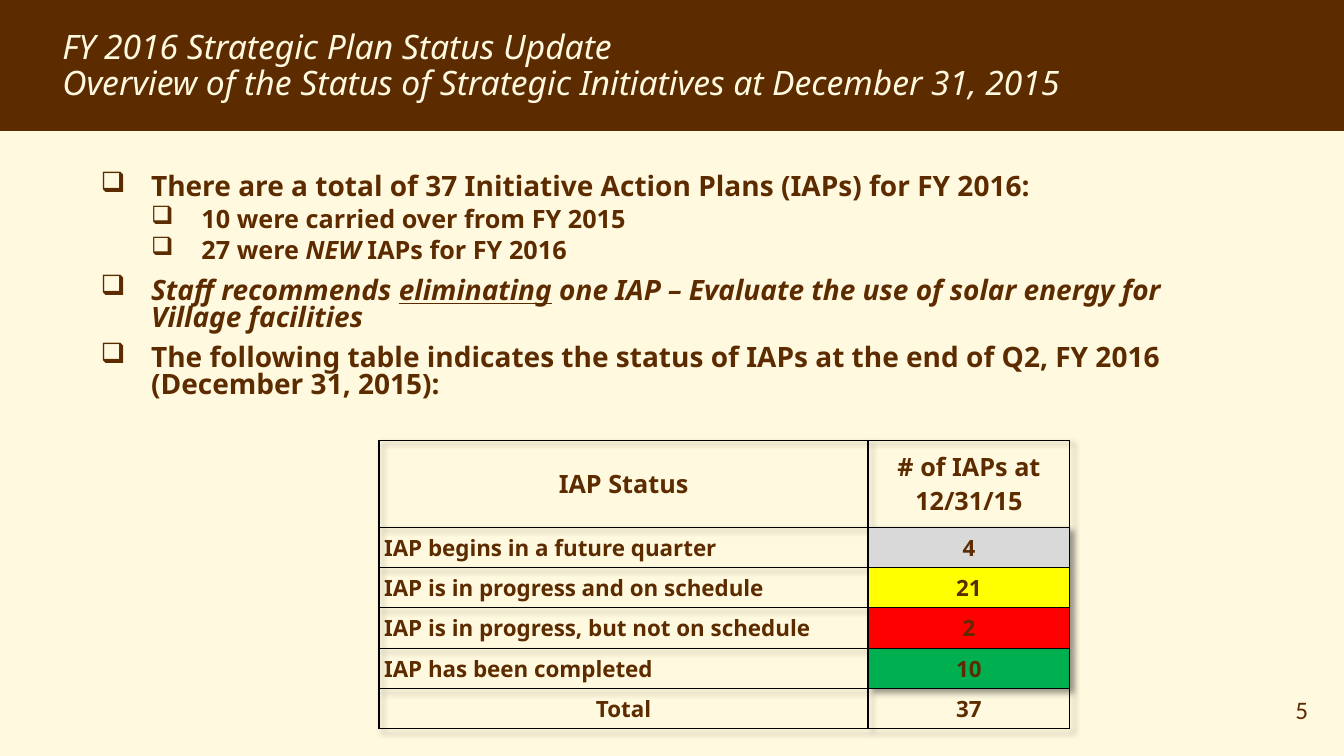
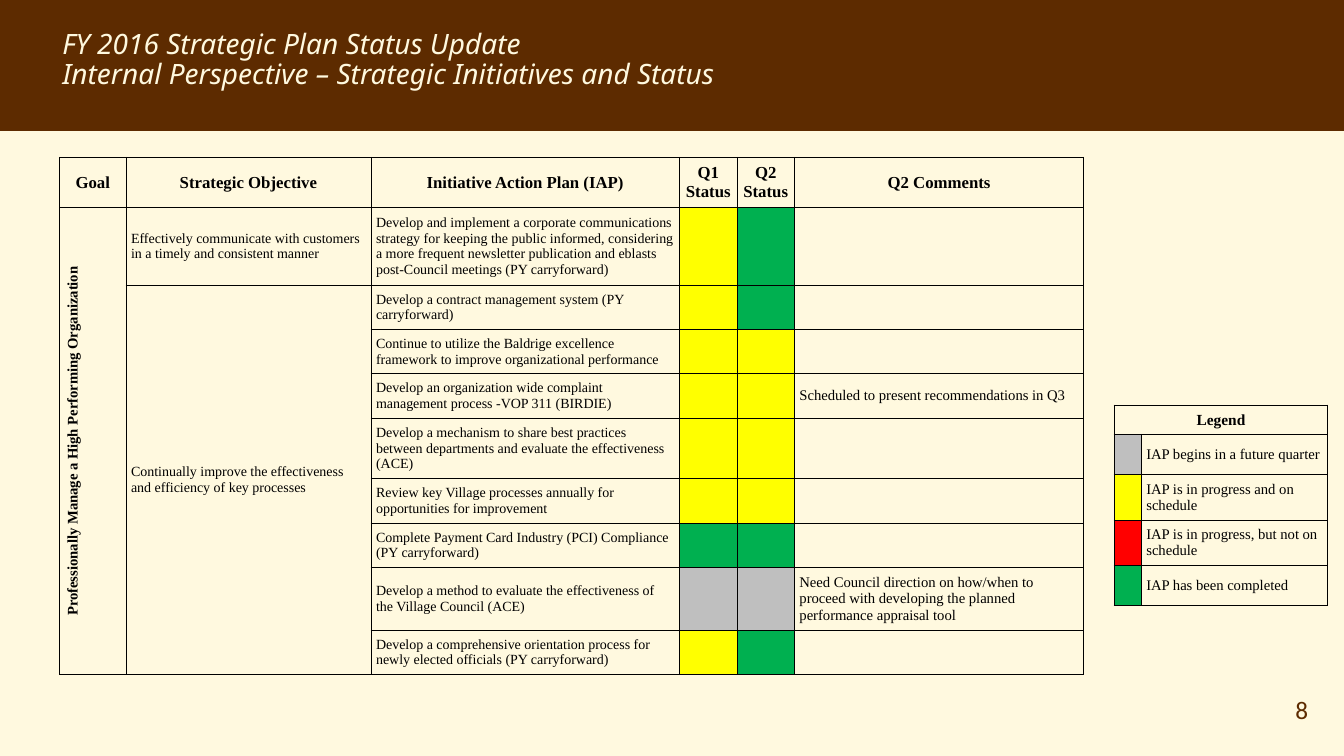
from lxml.etree import SubElement
from pptx import Presentation
from pptx.dml.color import RGBColor
from pptx.enum.shapes import MSO_SHAPE
from pptx.enum.text import MSO_ANCHOR, PP_ALIGN
from pptx.oxml.ns import qn
from pptx.util import Inches, Pt

COLORS = {
    "cream": "FFF9DF", "brown": "5D2B00", "black": "000000",
    "light": "D9D9D9", "future": "BFBFBF", "progress": "FFFF00",
    "late": "FF0000", "done": "00B050",
}
SANS = {"name": "Noto Sans", "bold": True}
SERIF = {"name": "Times New Roman"}
FONTS = {
    "title": {"name": "Noto Sans", "italic": True},
    "page": {"name": "Calibri", "size": Pt(18)},
    "point": {**SANS, "size": Pt(20)},
    "subpoint": {**SANS, "size": Pt(18)},
    "count head": {**SANS, "size": Pt(18)},
    "count": {**SANS, "size": Pt(16)},
    "status": {**SANS, "size": Pt(16)},
    "plan head": {**SERIF, "size": Pt(12), "bold": True},
    "goal": {**SERIF, "size": Pt(10.5), "bold": True},
    "plan": {**SERIF, "size": Pt(10)},
    "comment": {**SERIF, "size": Pt(10.5)},
    "legend head": {**SERIF, "size": Pt(11), "bold": True},
}
CENTERED = {"count head", "count", "plan head", "goal", "legend head"}
TIGHT = {f"margin_{side}": Inches(0.05) for side in ("left", "right", "top", "bottom")}


def rgb(name):
    return RGBColor.from_string(COLORS[name])


def apply(target, values):
    for attribute, value in values.items():
        setattr(target, attribute, value)


class StatusDeck:
    """Holds the report style and the slide being filled."""

    def __init__(self):
        self.deck = Presentation()
        apply(self.deck, {"slide_width": Inches(13.33), "slide_height": Inches(7.5)})
        self.slide = None

    def start(self, subtitle, size, page):
        self.slide = self.deck.slides.add_slide(self.deck.slide_layouts[6])
        background = self.slide.background.fill
        background.solid()
        background.fore_color.rgb = rgb("cream")
        band = self.slide.shapes.add_shape(
            MSO_SHAPE.RECTANGLE, 0, 0, self.deck.slide_width, Inches(1.3))
        band.shadow.inherit = False
        band.fill.solid()
        band.fill.fore_color.rgb = rgb("brown")
        band.line.fill.background()
        heading = self.frame(0.52, 0.25, 12.2, 0.9)
        for line in ("FY 2016 Strategic Plan Status Update", subtitle):
            paragraph = self.paragraph(heading)
            paragraph.line_spacing = 0.9
            self.run(paragraph, line, "title", "cream", {"size": Pt(size)})
        number = self.paragraph(self.frame(12.75, 6.84, 0.4, 0.4))
        self.run(number, str(page), "page", "brown")

    def frame(self, *box):
        frame = self.slide.shapes.add_textbox(*map(Inches, box)).text_frame
        frame.word_wrap = True
        return frame

    def paragraph(self, frame):
        first = frame.paragraphs[0]
        return frame.add_paragraph() if first.runs else first

    def run(self, paragraph, text, style, color, extra=None):
        run = paragraph.add_run()
        run.text = text
        apply(run.font, {**FONTS[style], **(extra or {})})
        run.font.color.rgb = rgb(color)

    def bullets(self, box, points):
        frame = self.frame(*box)
        for index, (level, parts) in enumerate(points):
            paragraph = self.paragraph(frame)
            properties = paragraph._p.get_or_add_pPr()
            properties.set("marL", str(Inches(0.5 * (level + 1))))
            properties.set("indent", str(Inches(-0.5)))
            SubElement(properties, qn("a:buChar")).set("char", "❑")
            before = (10, 5)[level] if index else 0
            apply(paragraph, {"level": level, "line_spacing": 0.8,
                              "space_before": Pt(before)})
            for text, extra in parts:
                self.run(paragraph, text, ("point", "subpoint")[level], "brown", extra)

    def table(self, corner, widths, heights, rows, color, border, merges=(), shadow=False):
        size = (sum(widths), sum(heights))
        table = self.slide.shapes.add_table(
            len(heights), len(widths), *map(Inches, (*corner, *size))).table
        apply(table, {"first_row": False, "horz_banding": False})
        if shadow:
            self.shadow(table)
        for column, width in zip(table.columns, widths):
            column.width = Inches(width)
        for row, height in zip(table.rows, heights):
            row.height = Inches(height)
        for r, row in enumerate(rows):
            for c, (text, style, fill) in enumerate(row):
                self.cell(table.cell(r, c), text, style, fill, color, border)
        for first, last in merges:
            table.cell(*first).merge(table.cell(*last))

    def shadow(self, table):
        effects = SubElement(table._tbl.tblPr, qn("a:effectLst"))
        outer = SubElement(effects, qn("a:outerShdw"), blurRad="50800",
                           dist="38100", dir="2700000", algn="tl")
        tint = SubElement(outer, qn("a:srgbClr"), val=COLORS["black"])
        SubElement(tint, qn("a:alpha"), val="40000")
        table._tbl.tblPr.insert(0, effects)

    def cell(self, cell, text, style, fill, color, border):
        properties = cell._tc.get_or_add_tcPr()
        for side in ("lnL", "lnR", "lnT", "lnB"):
            edge = SubElement(properties, qn(f"a:{side}"), w=str(Pt(border)))
            paint = SubElement(edge, qn("a:solidFill"))
            SubElement(paint, qn("a:srgbClr"), val=COLORS["black"])
        cell.vertical_anchor = MSO_ANCHOR.MIDDLE
        if style != "goal":
            apply(cell, TIGHT)
        if fill:
            cell.fill.solid()
            cell.fill.fore_color.rgb = rgb(fill)
        else:
            cell.fill.background()
        if text:
            paragraph = cell.text_frame.paragraphs[0]
            paragraph.alignment = PP_ALIGN.CENTER if style in CENTERED else PP_ALIGN.LEFT
            self.run(paragraph, text, style, color)
            if style == "goal":
                properties.set("vert", "vert270")


STATUSES = [
    ("IAP begins in a future quarter", "future", "4"),
    ("IAP is in progress and on schedule", "progress", "21"),
    ("IAP is in progress, but not on schedule", "late", "2"),
    ("IAP has been completed", "done", "10"),
]
POINTS = [
    (0, [("There are a total of 37 Initiative Action Plans (IAPs) for FY 2016:", {})]),
    (1, [("10 were carried over from FY 2015", {})]),
    (1, [("27 were ", {}), ("NEW", {"italic": True}), (" IAPs for FY 2016", {})]),
    (0, [("Staff recommends ", {"italic": True}),
         ("eliminating", {"italic": True, "underline": True}),
         (" one IAP – Evaluate the use of solar energy for Village facilities",
          {"italic": True})]),
    (0, [("The following table indicates the status of IAPs at the end of Q2, "
          "FY 2016 (December 31, 2015):", {})]),
]
PLAN_HEADS = ["Goal", "Strategic Objective", "Initiative Action Plan (IAP)",
              "Q1 Status", "Q2 Status", "Q2 Comments"]
GOAL = "Professionally Manage a High Performing Organization"
OBJECTIVES = {
    0: "Effectively communicate with customers in a timely and consistent manner",
    1: "Continually improve the effectiveness and efficiency of key processes",
}
PLANS = [
    ("Develop and implement a corporate communications strategy for keeping the public "
     "informed, considering a more frequent newsletter publication and eblasts "
     "post-Council meetings (PY carryforward)", "progress", "done", ""),
    ("Develop a contract management system (PY carryforward)", "progress", "done", ""),
    ("Continue to utilize the Baldrige excellence framework to improve organizational "
     "performance", "progress", "progress", ""),
    ("Develop an organization wide complaint management process -VOP 311 (BIRDIE)",
     "progress", "progress", "Scheduled to present recommendations in Q3"),
    ("Develop a mechanism to share best practices between departments and evaluate the "
     "effectiveness (ACE)", "progress", "progress", ""),
    ("Review key Village processes annually for opportunities for improvement",
     "progress", "progress", ""),
    ("Complete Payment Card Industry (PCI) Compliance (PY carryforward)",
     "done", "done", ""),
    ("Develop a method to evaluate the effectiveness of the Village Council (ACE)",
     "future", "future", "Need Council direction on how/when to proceed with developing "
     "the planned performance appraisal tool"),
    ("Develop a comprehensive orientation process for newly elected officials "
     "(PY carryforward)", "progress", "done", ""),
]


def overview(report):
    report.start("Overview of the Status of Strategic Initiatives at December 31, 2015", 24, 5)
    report.bullets((0.9, 1.69, 11.5, 2.6), POINTS)
    counts = [[("IAP Status", "count head", None),
               ("# of IAPs at 12/31/15", "count head", None)]]
    for label, status, count in STATUSES:
        shade = "light" if status == "future" else status
        counts.append([(label, "status", None), (count, "count", shade)])
    counts.append([("Total", "count", None), ("37", "count", None)])
    report.table((3.76, 4.37), [4.85, 2], [0.86] + [0.4] * 5, counts, "brown", 1, shadow=True)


def internal(report):
    report.start("Internal Perspective – Strategic Initiatives and Status", 20, 8)
    rows = [[(head, "plan head", None) for head in PLAN_HEADS]]
    for index, (plan, q1, q2, comment) in enumerate(PLANS):
        rows.append([("" if index else GOAL, "goal", None),
                     (OBJECTIVES.get(index, ""), "plan", None),
                     (plan, "plan", None), ("", "plan", q1), ("", "plan", q2),
                     (comment, "comment", None)])
    heights = [0.5, 0.76, 0.44, 0.44, 0.44, 0.59, 0.44, 0.44, 0.62, 0.44]
    report.table((0.59, 1.56), [0.66, 2.43, 3.06, 0.57, 0.57, 2.87], heights, rows,
                 "black", 0.5, merges=[((1, 0), (9, 0)), ((2, 1), (9, 1))])
    legend = [[("Legend", "legend head", None), ("", "comment", None)]]
    legend += [[("", "comment", status), (label, "comment", None)]
               for label, status, _ in STATUSES]
    report.table((11.05, 4.02), [0.27, 1.85], [0.29, 0.4, 0.45, 0.45, 0.4], legend,
                 "black", 1, merges=[((0, 0), (0, 1))])


def main():
    report = StatusDeck()
    overview(report)
    internal(report)
    report.deck.save("out.pptx")


if __name__ == "__main__":
    main()
